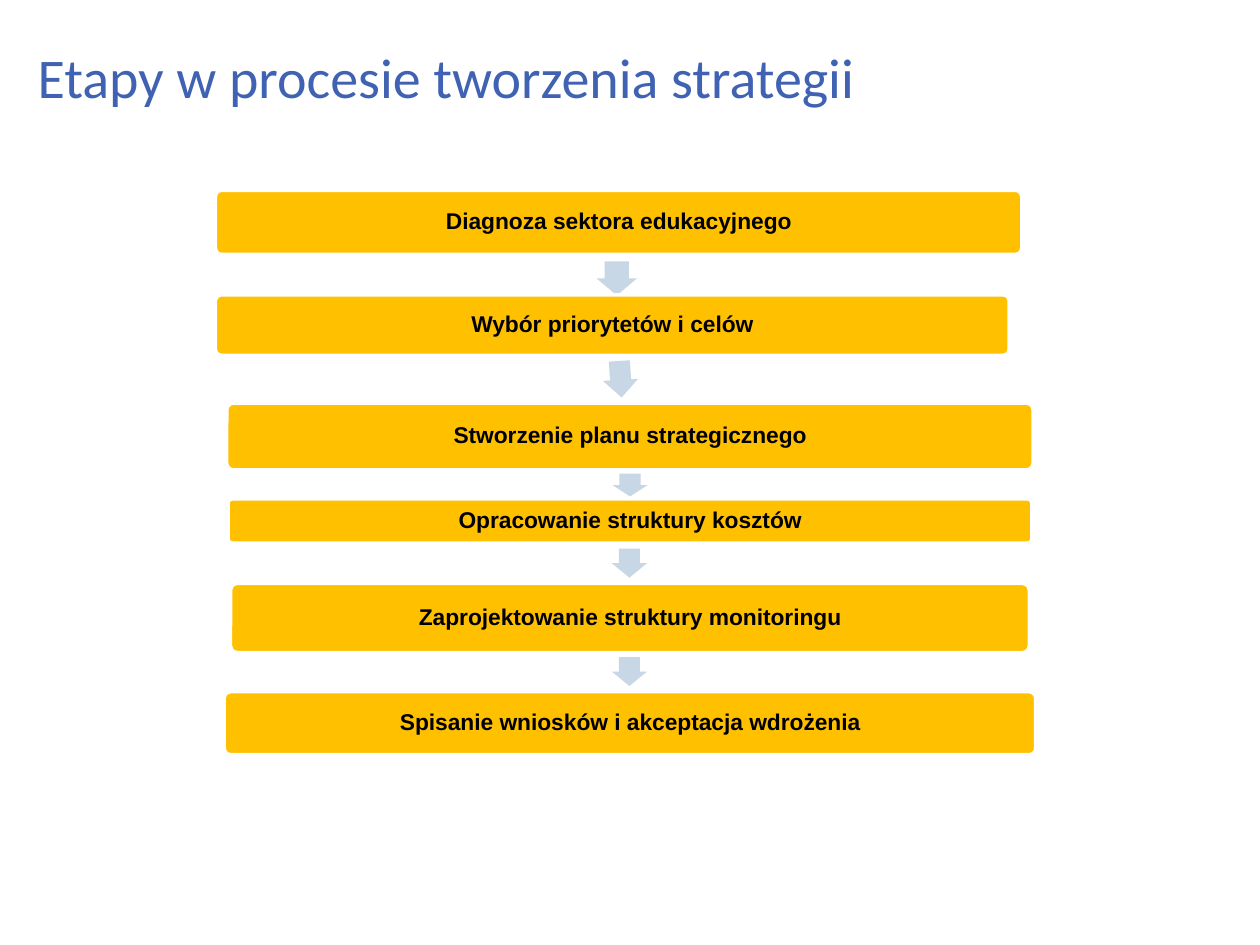
from dataclasses import dataclass
from typing import Optional

from pptx import Presentation
from pptx.dml.color import RGBColor
from pptx.enum.shapes import MSO_SHAPE
from pptx.enum.text import MSO_ANCHOR, PP_ALIGN
from pptx.util import Inches, Pt


@dataclass(frozen=True)
class Theme:
    title_color: RGBColor = RGBColor(0x40, 0x62, 0xB3)
    stage_fill: RGBColor = RGBColor(0xFF, 0xC0, 0x00)
    stage_line: RGBColor = RGBColor(0xFF, 0xFF, 0xFF)
    stage_text: RGBColor = RGBColor(0x00, 0x00, 0x00)
    arrow_fill: RGBColor = RGBColor(0xC8, 0xD7, 0xE5)
    title_font: str = "Calibri"
    stage_font: str = "Arial"
    title_size: Pt = Pt(32)
    stage_size: Pt = Pt(13)
    line_width: Pt = Pt(2)


@dataclass(frozen=True)
class Box:
    left: float
    top: float
    width: float
    height: float

    def lengths(self) -> tuple:
        return tuple(map(Inches, (self.left, self.top, self.width, self.height)))


@dataclass(frozen=True)
class Arrow:
    box: Box
    rotation: float = 90


@dataclass(frozen=True)
class Stage:
    label: str
    box: Box
    arrow: Optional[Arrow] = None  # leads on to the next stage


THEME = Theme()
TITLE = "Etapy w procesie tworzenia strategii"
STAGES = (
    Stage("Diagnoza sektora edukacyjnego", Box(1.71, 1.51, 6.4, 0.51),
          Arrow(Box(4.76, 2.05, 0.27, 0.32))),
    Stage("Wybór priorytetów i celów", Box(1.71, 2.34, 6.3, 0.48),
          Arrow(Box(4.78, 2.87, 0.29, 0.28), 86.4)),
    Stage("Stworzenie planu strategicznego", Box(1.8, 3.2, 6.4, 0.53),
          Arrow(Box(4.91, 3.71, 0.18, 0.28))),
    Stage("Opracowanie struktury kosztów", Box(1.81, 3.96, 6.38, 0.35),
          Arrow(Box(4.88, 4.33, 0.23, 0.28))),
    Stage("Zaprojektowanie struktury monitoringu", Box(1.83, 4.63, 6.34, 0.55),
          Arrow(Box(4.88, 5.19, 0.23, 0.28))),
    Stage("Spisanie wniosków i akceptacja wdrożenia", Box(1.78, 5.49, 6.44, 0.5)),
)


def apply_format(target, values: dict) -> None:
    for attribute, value in values.items():
        setattr(target, attribute, value)


def write_text(shape, text: str, frame: dict, paragraph: dict, font: dict,
               color: RGBColor) -> None:
    text_frame = shape.text_frame
    apply_format(text_frame, {"word_wrap": True,
                              "vertical_anchor": MSO_ANCHOR.MIDDLE, **frame})
    line = text_frame.paragraphs[0]
    apply_format(line, paragraph)
    run = line.add_run()
    run.text = text
    apply_format(run.font, font)
    run.font.color.rgb = color


def add_filled_shape(slide, kind: MSO_SHAPE, box: Box, fill: RGBColor,
                     adjustments: tuple):
    shape = slide.shapes.add_shape(kind, *box.lengths())
    shape.shadow.inherit = False
    shape.fill.solid()
    shape.fill.fore_color.rgb = fill
    for index, value in enumerate(adjustments):
        shape.adjustments[index] = value
    return shape


def draw_title(slide) -> None:
    title = slide.shapes.add_textbox(*Box(0.2, 0.29, 7.8, 0.63).lengths())
    write_text(title, TITLE, {}, {"alignment": PP_ALIGN.LEFT},
               {"name": THEME.title_font, "size": THEME.title_size},
               THEME.title_color)


def draw_arrow(slide, arrow: Arrow) -> None:
    shape = add_filled_shape(slide, MSO_SHAPE.RIGHT_ARROW, arrow.box,
                             THEME.arrow_fill, (0.6, 0.5))
    shape.rotation = arrow.rotation
    shape.line.fill.background()


def draw_stage(slide, stage: Stage) -> None:
    shape = add_filled_shape(slide, MSO_SHAPE.ROUNDED_RECTANGLE, stage.box,
                             THEME.stage_fill, (0.1,))
    shape.line.color.rgb = THEME.stage_line
    shape.line.width = THEME.line_width
    sides = ("left", "top", "right", "bottom")
    write_text(shape, stage.label,
               {f"margin_{side}": Inches(0.05) for side in sides},
               {"alignment": PP_ALIGN.CENTER, "line_spacing": 0.9},
               {"name": THEME.stage_font, "size": THEME.stage_size, "bold": True},
               THEME.stage_text)
    if stage.arrow:
        draw_arrow(slide, stage.arrow)


def main() -> None:
    presentation = Presentation()
    apply_format(presentation, {"slide_width": Inches(10),
                                "slide_height": Inches(7.5)})
    slide = presentation.slides.add_slide(presentation.slide_layouts[6])
    draw_title(slide)
    for stage in STAGES:
        draw_stage(slide, stage)
    presentation.save("out.pptx")


if __name__ == "__main__":
    main()
